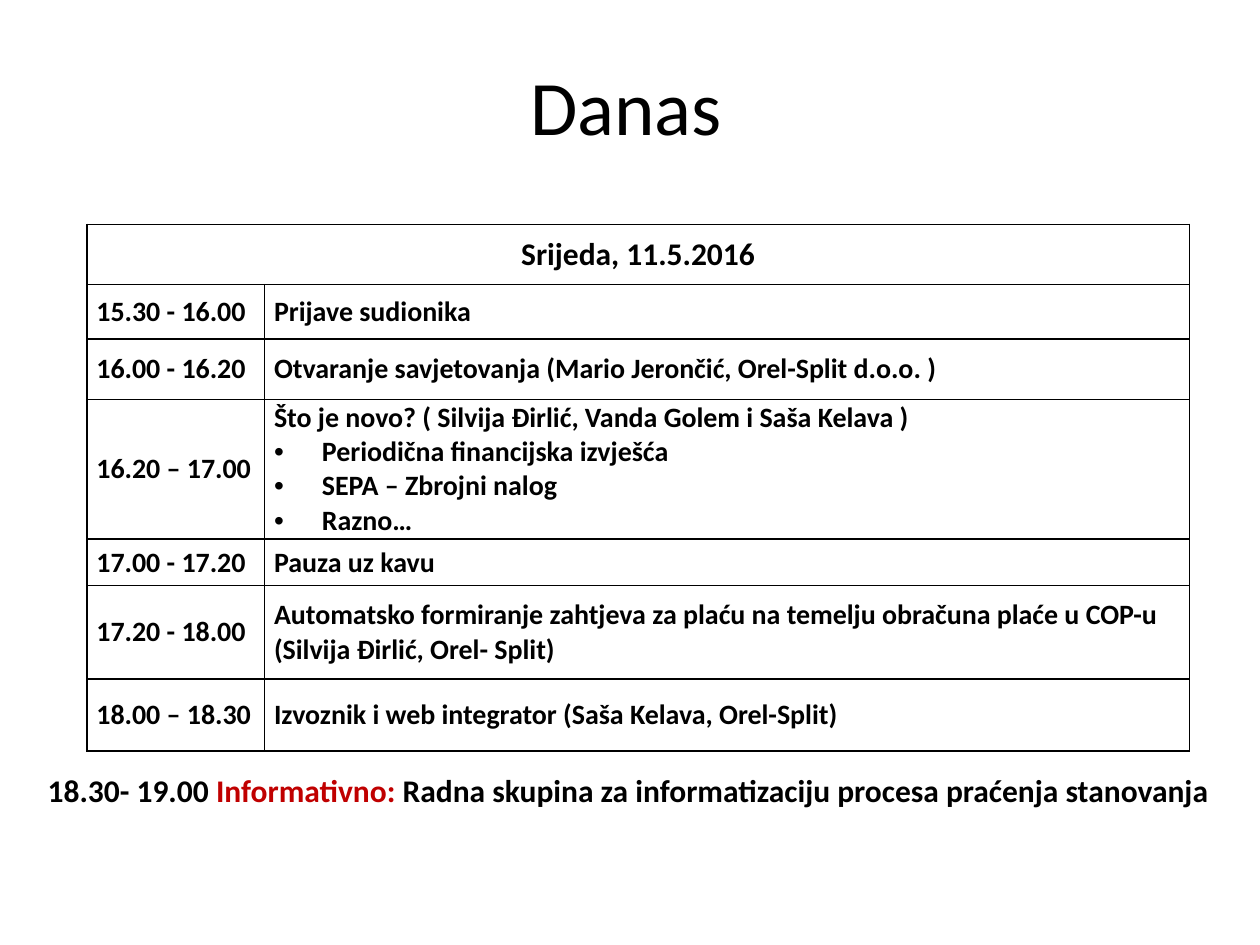
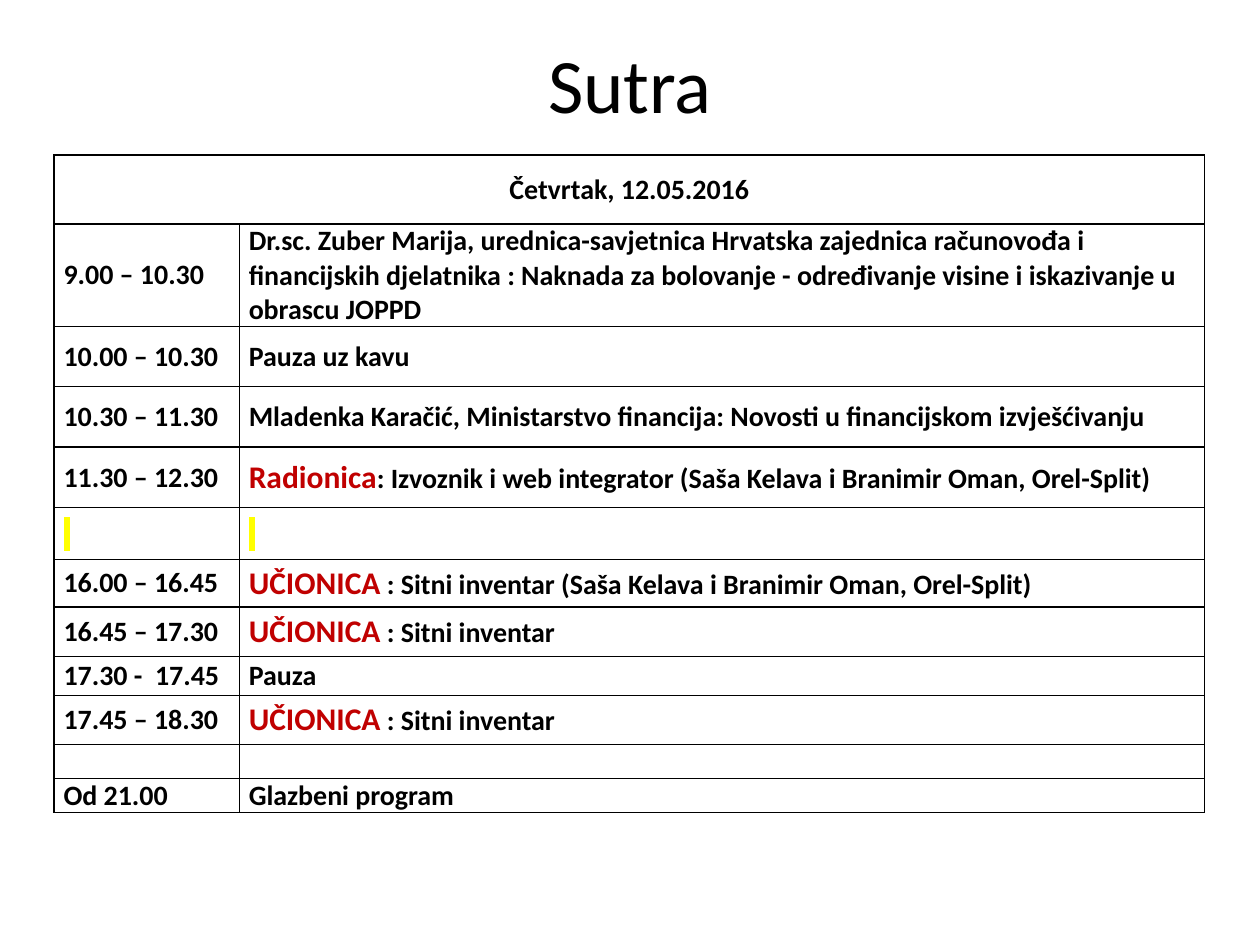
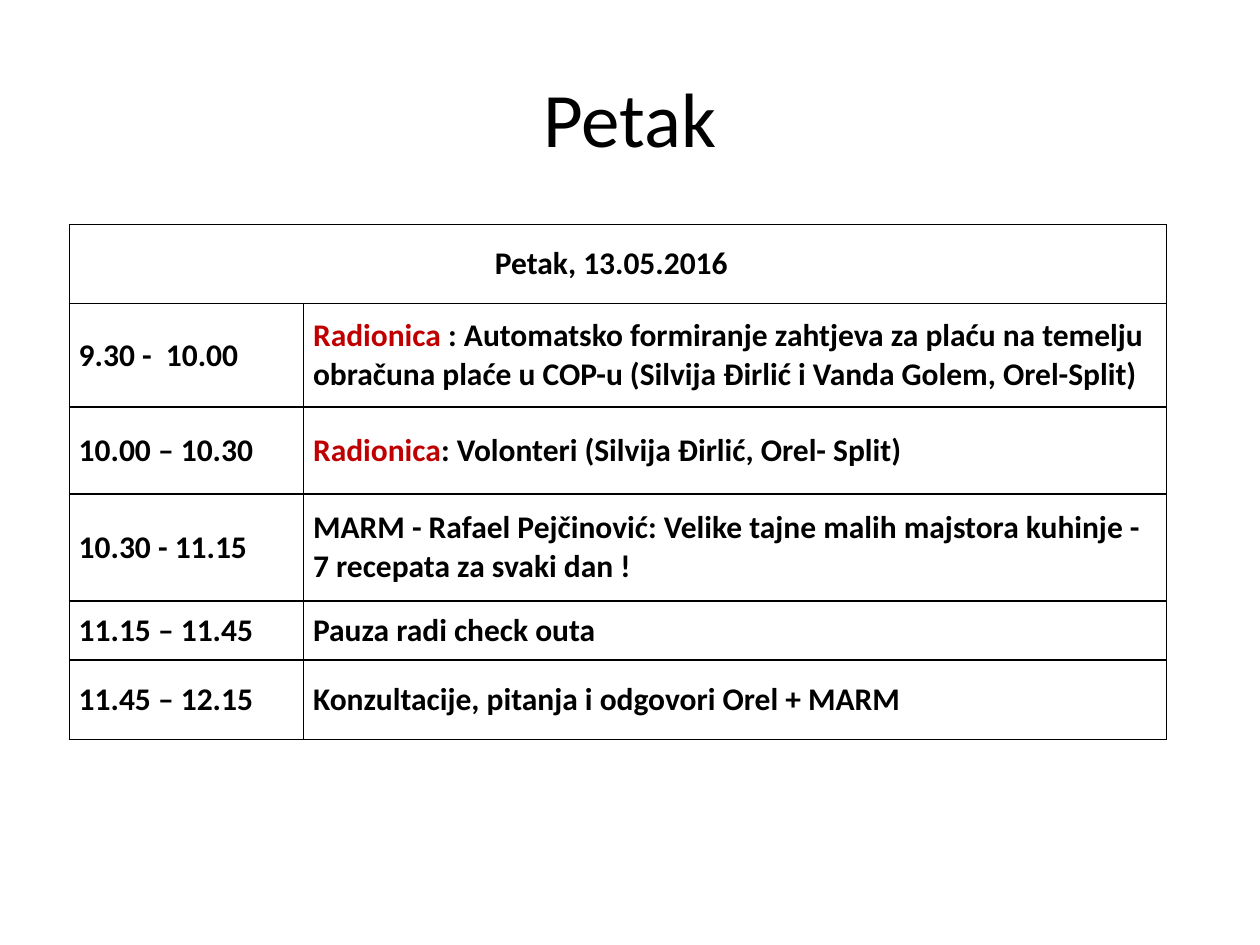
from dataclasses import dataclass
from typing import NamedTuple

import lxml.etree
import pptx
import pptx.dml.color
import pptx.enum.text
import pptx.oxml.ns
import pptx.util

WIDTH = pptx.util.Inches(10)
HEIGHT = pptx.util.Inches(7.5)
FONT = "Calibri"
BLACK = "000000"
RED = "C00000"
YELLOW = "FFFF00"
TITLE_SIZE = 44
CELL_INSET = 0.75
ALIGN = pptx.enum.text.PP_ALIGN
MIDDLE = pptx.enum.text.MSO_ANCHOR.MIDDLE
qn = pptx.oxml.ns.qn


class Run(NamedTuple):
    text: str
    color: str = BLACK
    size: float | None = None
    highlight: str | None = None


class Line(NamedTuple):
    runs: tuple[Run, ...]
    bullet: bool = False


class Box(NamedTuple):
    left: float
    top: float
    width: float
    height: float


class Entry(NamedTuple):
    height: float
    time: tuple[Line, ...]
    topic: tuple[Line, ...]


@dataclass(frozen=True)
class Day:
    title: str
    title_box: Box
    left: float
    top: float
    columns: tuple[float, float]
    date: str
    date_height: float
    date_size: float
    size: float
    entries: tuple[Entry, ...]
    date_right: float = CELL_INSET


def x(percent: float) -> int:
    return round(WIDTH * percent / 100)


def y(percent: float) -> int:
    return round(HEIGHT * percent / 100)


def rgb(color: str) -> pptx.dml.color.RGBColor:
    return pptx.dml.color.RGBColor.from_string(color)


def line(*runs: str | Run, bullet: bool = False) -> Line:
    return Line(tuple(Run(r) if isinstance(r, str) else r for r in runs), bullet)


def entry(height: float, time: str | Run, *topic: str | Line) -> Entry:
    lines = tuple(line(t) if isinstance(t, str) else t for t in topic)
    return Entry(height, (line(time),), lines)


def solid(parent, tag: str, color: str):
    el = lxml.etree.SubElement(parent, qn(tag))
    lxml.etree.SubElement(el, qn("a:srgbClr"), val=color)
    return el


def write(tf, lines: tuple[Line, ...], *, size: float, bold: bool = False, align=ALIGN.LEFT) -> None:
    for i, item in enumerate(lines):
        p = tf.paragraphs[0] if i == 0 else tf.add_paragraph()
        p.alignment = align
        if item.bullet:
            pPr = p._p.get_or_add_pPr()
            indent = x(3.8)
            pPr.set("marL", str(indent))
            pPr.set("indent", str(-indent))
            lxml.etree.SubElement(pPr, qn("a:buFont"), typeface="Arial")
            lxml.etree.SubElement(pPr, qn("a:buChar"), char="•")
        for part in item.runs:
            r = p.add_run()
            r.text = part.text
            r.font.size = pptx.util.Pt(part.size or size)
            r.font.bold = bold
            r.font.color.rgb = rgb(part.color)
            if part.highlight:
                solid(r._r.get_or_add_rPr(), "a:highlight", part.highlight)
            r.font.name = FONT
        if not item.runs:
            lxml.etree.SubElement(p._p, qn("a:endParaRPr"), sz=str(size * 100), b=str(int(bold)))


def add_text(s, box: Box, lines: tuple[Line, ...], *, wrap: bool = True, anchor=None, **fmt) -> None:
    sp = s.shapes.add_textbox(x(box.left), y(box.top), x(box.width), y(box.height))
    tf = sp.text_frame
    tf.word_wrap = wrap
    if anchor is not None:
        tf.vertical_anchor = anchor
    write(tf, lines, **fmt)


def style_cell(cell, right: float = CELL_INSET) -> None:
    cell.margin_left = x(CELL_INSET)
    cell.margin_right = x(right)
    cell.margin_top = cell.margin_bottom = 0
    cell.vertical_anchor = MIDDLE
    tcPr = cell._tc.get_or_add_tcPr()
    for side in ("a:lnL", "a:lnR", "a:lnT", "a:lnB"):
        ln = lxml.etree.SubElement(tcPr, qn(side), w=str(pptx.util.Pt(1)))
        solid(ln, "a:solidFill", BLACK)
    cell.fill.background()


def add_schedule(s, day: Day) -> None:
    heights = [day.date_height, *(e.height for e in day.entries)]
    table = s.shapes.add_table(
        len(heights), 2, x(day.left), y(day.top), x(sum(day.columns)), y(sum(heights))
    ).table
    table.first_row = table.horz_banding = False
    for column, width in zip(table.columns, day.columns):
        column.width = x(width)
    for row, height in zip(table.rows, heights):
        row.height = y(height)
    for cell in table.iter_cells():
        style_cell(cell)
    head = table.cell(0, 0)
    head.merge(table.cell(0, 1))
    head.margin_right = x(day.date_right)
    write(head.text_frame, (line(day.date),), size=day.date_size, bold=True, align=ALIGN.CENTER)
    for i, e in enumerate(day.entries, 1):
        for j, lines in enumerate((e.time, e.topic)):
            write(table.cell(i, j).text_frame, lines, size=day.size, bold=True)


def add_day(prs, day: Day):
    s = prs.slides.add_slide(prs.slide_layouts[6])
    add_text(s, day.title_box, (line(day.title),), anchor=MIDDLE, size=TITLE_SIZE, align=ALIGN.CENTER)
    add_schedule(s, day)
    return s


WORKSHOP = Run("Radionica", RED)
BIG_WORKSHOP = Run("Radionica", RED, 18)
CLASSROOM = Run("UČIONICA", RED, 18)
MARK = Run(" ", highlight=YELLOW)
BLANK = Line(())

TODAY = Day(
    "Danas", Box(4.7, 2.8, 90, 16.67), 6.9, 23.73, (14.1, 73.4),
    "Srijeda, 11.5.2016", 6.4, 18, 16,
    (
        entry(5.73, "15.30 - 16.00", "Prijave sudionika"),
        entry(6.4, "16.00 - 16.20", "Otvaranje savjetovanja (Mario Jerončić, Orel-Split d.o.o. )"),
        entry(
            14.8, "16.20 – 17.00",
            "Što je novo? ( Silvija Đirlić, Vanda Golem i Saša Kelava )",
            line("Periodična financijska izvješća", bullet=True),
            line("SEPA – Zbrojni nalog", bullet=True),
            line("Razno…", bullet=True),
        ),
        entry(4.93, "17.00 - 17.20", "Pauza uz kavu"),
        entry(
            9.87, "17.20 - 18.00",
            "Automatsko formiranje zahtjeva za plaću na temelju obračuna plaće u COP-u",
            "(Silvija Đirlić, Orel- Split)",
        ),
        entry(7.6, "18.00 – 18.30", "Izvoznik i web integrator (Saša Kelava, Orel-Split)"),
    ),
)

TOMORROW = Day(
    "Sutra", Box(5, 1.07, 90, 15.33), 4.3, 16.4, (14.7, 76.6),
    "Četvrtak, 12.05.2016", 7.33, 16, 16,
    (
        entry(
            10.8, "9.00 – 10.30",
            "Dr.sc. Zuber Marija, urednica-savjetnica Hrvatska zajednica računovođa i "
            "financijskih djelatnika : Naknada za bolovanje - određivanje visine i "
            "iskazivanje u obrascu JOPPD",
        ),
        entry(6.4, "10.00 – 10.30", "Pauza uz kavu"),
        entry(
            6.4, "10.30 – 11.30",
            "Mladenka Karačić, Ministarstvo financija: Novosti u financijskom izvješćivanju",
        ),
        entry(
            6.4, "11.30 – 12.30",
            line(BIG_WORKSHOP, ": Izvoznik i web integrator (Saša Kelava i Branimir Oman, Orel-Split)"),
        ),
        entry(5.47, MARK, line(MARK)),
        entry(
            5.07, "16.00 – 16.45",
            line(CLASSROOM, " : Sitni inventar (Saša Kelava i Branimir Oman, Orel-Split)"),
        ),
        entry(5.2, "16.45 – 17.30", line(CLASSROOM, " : Sitni inventar")),
        entry(4.13, "17.30 -  17.45", "Pauza"),
        entry(5.2, "17.45 – 18.30", line(CLASSROOM, " : Sitni inventar")),
        Entry(3.6, (BLANK,), (BLANK,)),
        entry(3.6, "Od 21.00", "Glazbeni program"),
    ),
)

FRIDAY = Day(
    "Petak", Box(5, 4, 90, 16.67), 5.5, 23.73, (18.6, 68.5),
    "Petak, 13.05.2016", 8.4, 18, 18,
    (
        entry(
            10.93, "9.30 -  10.00",
            line(
                WORKSHOP,
                " : Automatsko formiranje zahtjeva za plaću na temelju obračuna plaće "
                "u COP-u (Silvija Đirlić i Vanda Golem, Orel-Split)",
            ),
        ),
        entry(9.2, "10.00 – 10.30", line(WORKSHOP, ": Volonteri (Silvija Đirlić, Orel- Split)")),
        entry(
            11.33, "10.30 - 11.15",
            "MARM - Rafael Pejčinović: Velike tajne malih majstora kuhinje - "
            "7 recepata za svaki dan !",
        ),
        entry(6.27, "11.15 – 11.45", "Pauza radi check outa"),
        entry(8.4, "11.45 – 12.15", "Konzultacije, pitanja i odgovori Orel + MARM"),
    ),
    date_right=1.8,
)


def main() -> None:
    prs = pptx.Presentation()
    prs.slide_width, prs.slide_height = WIDTH, HEIGHT
    today, *_ = [add_day(prs, day) for day in (TODAY, TOMORROW, FRIDAY)]
    evening = line(
        "18.30- 19.00 ",
        Run("Informativno: ", RED),
        "Radna skupina za informatizaciju procesa praćenja stanovanja",
    )
    add_text(today, Box(2.8, 80.93, 95.5, 5.33), (evening,), wrap=False, size=18, bold=True)
    prs.save("out.pptx")


if __name__ == "__main__":
    main()
